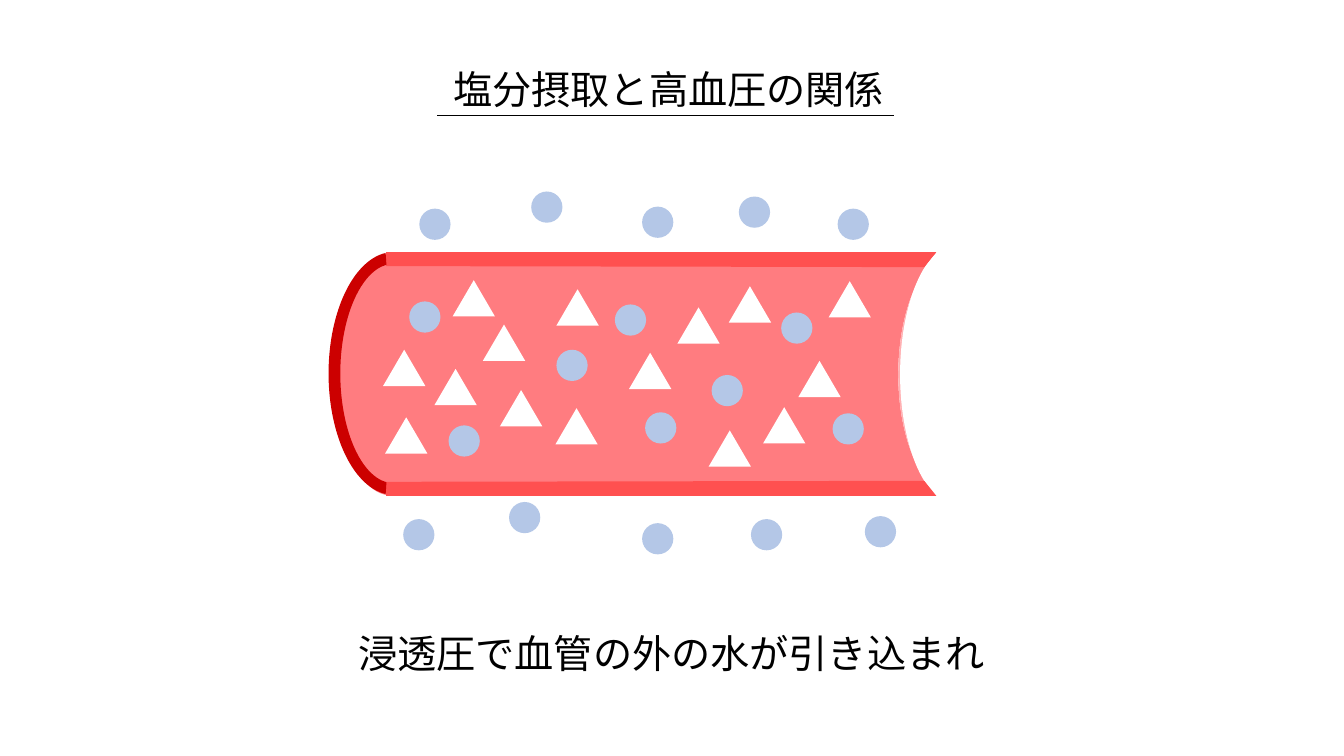
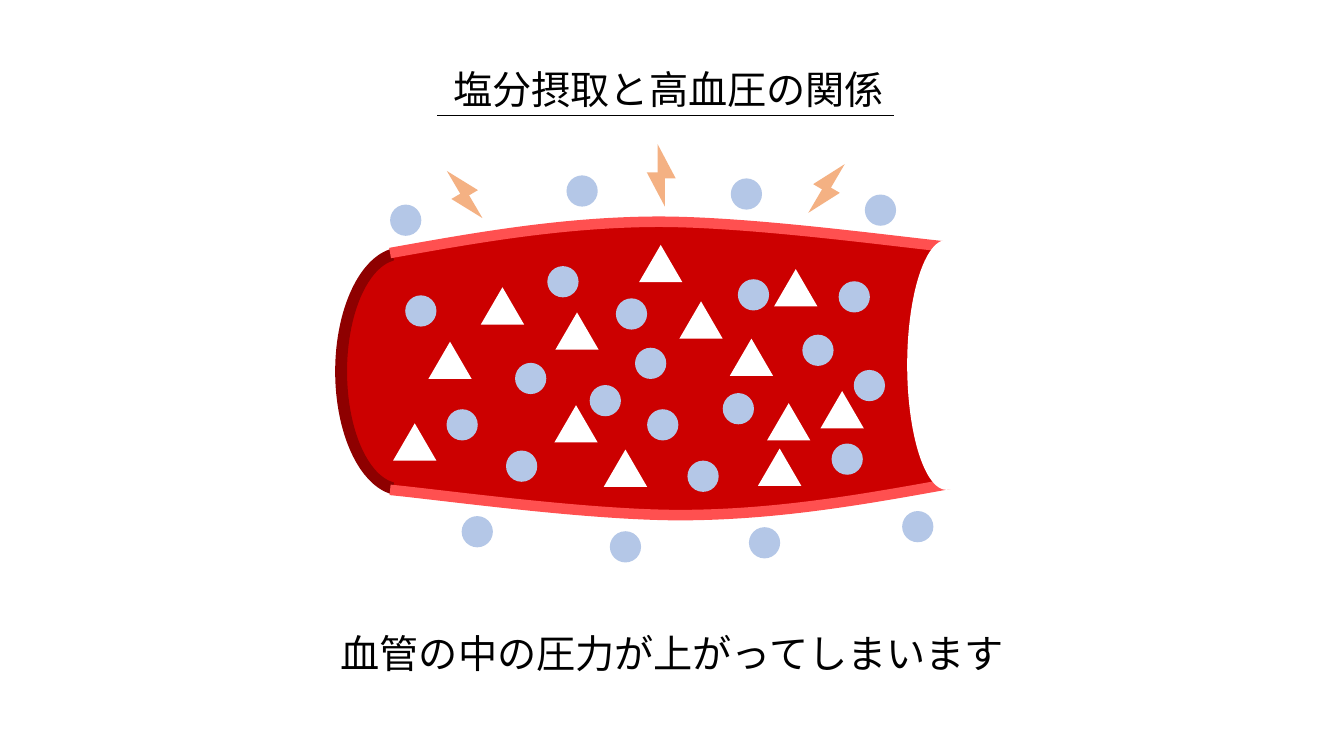
"""Builds two slides on how salt intake raises blood pressure."""
from dataclasses import dataclass
from math import cos, radians, sin

from lxml.etree import SubElement
from pptx import Presentation
from pptx.dml.color import RGBColor
from pptx.enum.shapes import MSO_CONNECTOR as Connector, MSO_SHAPE as Preset
from pptx.enum.text import MSO_AUTO_SIZE as AutoSize, PP_ALIGN as Align
from pptx.oxml.ns import qn
from pptx.shapes.autoshape import Shape
from pptx.shapes.group import GroupShape
from pptx.slide import Slide
from pptx.util import Inches, Pt

Point = tuple[float, float]
Canvas = Slide | GroupShape

FONT = "Noto Sans CJK JP"
BLACK = RGBColor(0x00, 0x00, 0x00)
WHITE = RGBColor(0xFF, 0xFF, 0xFF)
WATER = RGBColor(0xB4, 0xC7, 0xE7)
BOLT = RGBColor(0xF4, 0xB1, 0x83)
WALL = RGBColor(0xFF, 0x50, 0x50)
CALM_BLOOD = RGBColor(0xFF, 0x7C, 0x80)
RED = RGBColor(0xCC, 0x00, 0x00)
DARK_RED = RGBColor(0x8E, 0x00, 0x00)

TITLE = "塩分摂取と高血圧の関係"
DROP_SIZE = 0.31
RIM_ADJUSTMENTS = (110.26, 213.73, 0.09)


@dataclass(frozen=True)
class Box:
    left: float
    top: float
    width: float
    height: float


@dataclass(frozen=True)
class Bolt:
    center: Point
    width: float
    height: float
    angle: float = 0
    flipped: bool = False


@dataclass(frozen=True)
class Particles:
    water: tuple[Point, ...]
    salt: tuple[Point, ...]
    salt_width: float
    salt_height: float


CALM_PARTICLES = Particles(
    water=(
        (4.06, 2.99), (4.45, 4.22), (5.52, 3.47), (6.4, 4.09), (6.1, 3.02), (7.06, 3.72),
        (7.75, 3.1), (8.26, 4.1), (4.16, 2.07), (5.27, 1.9), (6.37, 2.05), (7.33, 1.95),
        (8.31, 2.07), (4, 5.15), (5.05, 4.98), (6.37, 5.19), (7.45, 5.15), (8.58, 5.12),
    ),
    salt=(
        (4.79, 3.22), (5.51, 4.05), (6.72, 3.05), (7.57, 4.04), (3.8, 3.47), (4.96, 3.87),
        (5.52, 2.87), (6.24, 3.5), (7.23, 2.84), (7.92, 3.58), (7.03, 4.27), (8.22, 2.79),
        (4.31, 3.66), (4.49, 2.78), (3.82, 4.14),
    ),
    salt_width=0.42,
    salt_height=0.36,
)

SWOLLEN_PARTICLES = Particles(
    water=(
        (4.02, 2.93), (4.43, 4.06), (5.43, 2.64), (6.42, 4.06), (6.11, 2.96), (7.32, 2.77),
        (7.96, 3.32), (8.25, 4.4), (5.11, 3.6), (5.02, 4.47), (5.85, 3.82), (6.82, 4.57),
        (6.3, 3.45), (7.17, 3.9), (8.32, 2.79), (8.47, 3.67), (3.87, 2.03), (5.62, 1.74),
        (7.25, 1.77), (8.95, 5.07), (7.43, 5.23), (6.05, 5.27), (4.58, 5.12), (8.58, 1.93),
    ),
    salt=(
        (4.77, 2.85), (5.5, 4.02), (6.74, 2.99), (7.61, 4), (4.25, 3.39), (5.51, 3.1),
        (5.99, 4.46), (3.9, 4.2), (6.34, 2.43), (7.24, 3.36), (7.52, 4.45), (7.68, 2.67),
        (8.14, 3.88),
    ),
    salt_width=0.43,
    salt_height=0.37,
)

SWOLLEN_BODY = (
    (6.61, 2.19), (5.58, 2.26), (3.91, 2.5), (3.62, 2.72), (3.43, 3.21), (3.39, 3.69),
    (3.47, 4.29), (3.7, 4.72), (3.9, 4.85), (4.8, 4.94), (5.9, 5.05), (6.56, 5.1),
    (7.01, 5.09), (7.71, 5.03), (8.5, 4.95), (9.27, 4.8), (9.4, 4.72), (9.41, 2.49),
    (8.33, 2.32), (7.05, 2.2),
)

SWOLLEN_WALLS = (
    ((3.87, 2.51), (4.71, 2.36), (5.55, 2.21), (6.47, 2.2), (7.4, 2.19), (8.9, 2.4), (9.42, 2.45)),
    ((9.42, 4.8), (8.59, 4.95), (7.75, 5.1), (6.82, 5.11), (5.89, 5.12), (4.39, 4.91), (3.87, 4.86)),
)

BOLTS = (
    Bolt((6.56, 1.74), 0.18, 0.34),
    Bolt((4.61, 1.93), 0.17, 0.32, -30.4),
    Bolt((8.2, 1.87), 0.17, 0.33, 30.4, flipped=True),
)


def paint(shape: Shape, fill: RGBColor) -> Shape:
    """Give a shape a plain fill without line or shadow."""
    shape.shadow.inherit = False
    shape.fill.solid()
    shape.fill.fore_color.rgb = fill
    shape.line.fill.background()
    return shape


def add_preset(canvas: Canvas, preset: Preset, box: Box, fill: RGBColor, *,
               rotation: float = 0, adjustments: tuple[float, ...] = ()) -> Shape:
    """Draw a preset shape."""
    shape = canvas.shapes.add_shape(preset, Inches(box.left), Inches(box.top),
                                    Inches(box.width), Inches(box.height))
    shape.rotation = rotation
    for index, value in enumerate(adjustments):
        shape.adjustments[index] = value
    return paint(shape, fill)


def add_outline(canvas: Canvas, points: tuple[Point, ...], fill: RGBColor, *,
                closed: bool = True) -> Shape:
    """Draw a freeform through the given points."""
    start, *others = [(Inches(x), Inches(y)) for x, y in points]
    builder = canvas.shapes.build_freeform(*start)
    builder.add_line_segments(others, close=closed)
    return paint(builder.convert_to_shape(), fill)


def add_wall(canvas: Canvas, points: tuple[Point, ...]) -> None:
    """Draw a curved wall, turning every three segments into one cubic curve."""
    wall = add_outline(canvas, points, RED, closed=False)
    wall.line.color.rgb = WALL
    wall.line.width = Pt(7.5)
    segments = list(wall._element.iter(qn("a:lnTo")))
    outline = segments[0].getparent()
    for index in range(0, len(segments), 3):
        curve = SubElement(outline, qn("a:cubicBezTo"))
        for segment in segments[index:index + 3]:
            curve.append(segment[0])
            outline.remove(segment)


def add_text(page: Slide, text: str, box: Box, *, size: float = 28,
             color: RGBColor = BLACK, align: Align = Align.LEFT) -> None:
    """Write one unwrapped line of text."""
    shape = page.shapes.add_textbox(Inches(box.left), Inches(box.top),
                                    Inches(box.width), Inches(box.height))
    frame = shape.text_frame
    frame.word_wrap = False
    frame.auto_size = AutoSize.SHAPE_TO_FIT_TEXT
    para = frame.paragraphs[0]
    para.alignment = align
    span = para.add_run()
    span.text = text
    span.font.size = Pt(size)
    span.font.color.rgb = color
    span.font.name = FONT
    SubElement(span.font._element, qn("a:ea"), typeface=FONT)


def add_page(deck: Presentation, caption: str, caption_box: Box) -> Slide:
    """Add a page with the shared underlined title and its caption."""
    page = deck.slides.add_slide(deck.slide_layouts[6])
    add_text(page, TITLE, Box(4.4, 0.6, 4.52, 0.57))
    rule = page.shapes.add_connector(Connector.STRAIGHT, Inches(4.34), Inches(1.14),
                                     Inches(8.87), Inches(1.14))
    rule.line.color.rgb = BLACK
    rule.line.width = Pt(0.5)
    SubElement(rule._element.spPr, qn("a:effectLst"))
    add_text(page, caption, caption_box, align=Align.CENTER)
    return page


def add_rim(canvas: Canvas, box: Box, fill: RGBColor) -> None:
    """Draw the rounded left rim of the vessel."""
    add_preset(canvas, Preset.BLOCK_ARC, box, fill, rotation=270, adjustments=RIM_ADJUSTMENTS)


def add_particles(page: Slide, particles: Particles) -> None:
    """Scatter water drops and salt grains."""
    for left, top in particles.water:
        add_preset(page, Preset.OVAL, Box(left, top, DROP_SIZE, DROP_SIZE), WATER)
    for left, top in particles.salt:
        add_preset(page, Preset.ISOSCELES_TRIANGLE,
                   Box(left, top, particles.salt_width, particles.salt_height), WHITE)


def add_bolt(page: Slide, bolt: Bolt) -> None:
    """Draw a bolt from two grouped right triangles facing each other."""
    group = page.shapes.add_group_shape()
    angle = radians(bolt.angle)
    across = bolt.width * (-0.3 if bolt.flipped else 0.3)
    along = -bolt.height * 0.41
    shift_x = across * cos(angle) - along * sin(angle)
    shift_y = across * sin(angle) + along * cos(angle)
    for side, turn in ((1, 0), (-1, 180)):
        box = Box(bolt.center[0] + side * shift_x - bolt.width / 2,
                  bolt.center[1] + side * shift_y - bolt.height / 2,
                  bolt.width, bolt.height)
        half = add_preset(group, Preset.RIGHT_TRIANGLE, box, BOLT,
                          rotation=(bolt.angle + turn) % 360)
        if bolt.flipped:
            half._element.spPr.xfrm.set("flipH", "1")


def draw_calm_vessel(page: Slide) -> None:
    """Draw the straight vessel."""
    add_preset(page, Preset.CAN, Box(5.47, 0.37, 2.4, 6.69), CALM_BLOOD,
               rotation=90, adjustments=(0.46,))
    add_preset(page, Preset.OVAL, Box(8.93, 2.41, 1.16, 2.61), WHITE)
    for edge, inward in ((2.5, 1), (4.92, -1)):
        add_outline(page, ((3.83, edge), (9.29, edge), (9.17, edge + 0.15 * inward),
                           (3.83, edge + 0.14 * inward)), WALL)
    add_rim(page, Box(2.7, 3.06, 2.41, 1.29), RED)


def draw_swollen_vessel(page: Slide) -> None:
    """Draw the bulging vessel under pressure."""
    vessel = page.shapes.add_group_shape()
    add_outline(vessel, SWOLLEN_BODY, RED)
    add_rim(vessel, Box(2.75, 3.03, 2.46, 1.31), DARK_RED)
    for points in SWOLLEN_WALLS:
        add_wall(vessel, points)
    add_preset(vessel, Preset.OVAL, Box(9, 2.38, 0.78, 2.48), WHITE)
    for bolt in BOLTS:
        add_bolt(page, bolt)


def main() -> None:
    """Build and save the deck."""
    deck = Presentation()
    deck.slide_width, deck.slide_height = Inches(40 / 3), Inches(7.5)

    page = add_page(deck, "浸透圧で血管の外の水が引き込まれ", Box(3.42, 6.19, 6.48, 0.57))
    draw_calm_vessel(page)
    add_particles(page, CALM_PARTICLES)

    page = add_page(deck, "血管の中の圧力が上がってしまいます", Box(3.23, 6.19, 6.88, 0.57))
    draw_swollen_vessel(page)
    add_particles(page, SWOLLEN_PARTICLES)

    deck.save("out.pptx")


if __name__ == "__main__":
    main()
